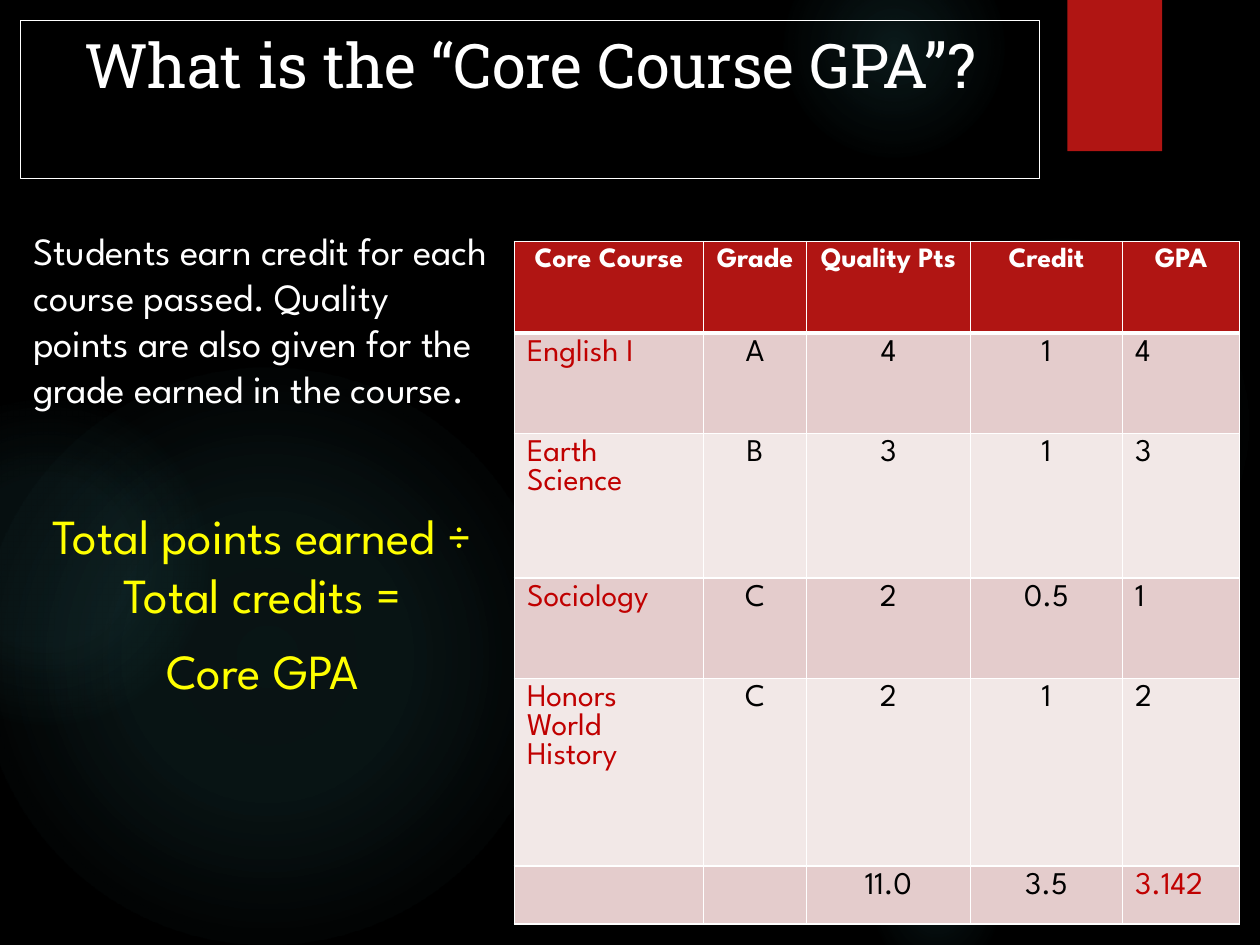
from lxml.etree import SubElement
from pptx import Presentation
from pptx.dml.color import RGBColor
from pptx.enum.shapes import MSO_SHAPE
from pptx.enum.text import MSO_ANCHOR, PP_ALIGN
from pptx.oxml import parse_xml
from pptx.oxml.ns import nsdecls, qn
from pptx.util import Cm, Pt

COLORS = {
    "background": "000000", "glow": "50B9C1", "accent": "B01513",
    "light": "FFFFFF", "dark": "000000", "formula": "FFFF00",
    "highlight": "C00000", "odd": "E4CCCC", "even": "F2E8E7",
}
BODY_FONT = "League Spartan"
TITLE_FONT = "Roboto Slab"

# left, top, diameter in cm, then (position, opacity) stops in percent
GLOWS = [
    (17.5, 4.65, 7.82, [(0, 7), (36, 6), (69, 0)]),
    (15.8, -1.27, 4.45, [(0, 14), (36, 7), (73, 0)]),
    (17.5, 16.94, 2.74, [(0, 9), (36, 5), (66, 0)]),
    (-0.43, 7.42, 11.63, [(0, 11), (36, 10), (75, 0)]),
    (-2.34, 8.05, 6.55, [(0, 8), (36, 8), (72, 0)]),
]
COLUMN_WIDTHS = [3.81, 2.08, 3.3, 3.07, 2.36]
ROW_HEIGHTS = [1.84, 2.03, 2.91, 2.03, 3.78, 1.17]
COURSES = [
    ["Core Course", "Grade", "Quality Pts", "Credit", "GPA"],
    ["English I", "A", "4", "1", "4"],
    ["Earth Science", "B", "3", "1", "3"],
    ["Sociology", "C", "2", "0.5", "1"],
    ["Honors World History", "C", "2", "1", "2"],
    ["", "", "11.0", "3.5", "3.142"],
]


def rgb(name):
    return RGBColor.from_string(COLORS[name])


def style(p, size, color, font=BODY_FONT, align=PP_ALIGN.LEFT, bold=False):
    p.alignment = align
    p.font.size, p.font.name, p.font.bold = Pt(size), font, bold
    p.font.color.rgb = rgb(color)


def add_plain_shape(s, kind, left, top, width, height):
    sp = s.shapes.add_shape(kind, Cm(left), Cm(top), Cm(width), Cm(height))
    sp.shadow.inherit = False
    sp.line.fill.background()
    return sp


def add_glow(s, left, top, size, stops):
    """Add a circle that fades out from its centre."""
    sp = add_plain_shape(s, MSO_SHAPE.OVAL, left, top, size, size)
    sp.fill.gradient()
    old = sp._element.spPr.find(qn("a:gradFill"))
    stop_xml = "".join(
        f'<a:gs pos="{pos * 1000}"><a:srgbClr val="{COLORS["glow"]}">'
        f'<a:alpha val="{alpha * 1000}"/></a:srgbClr></a:gs>'
        for pos, alpha in stops)
    old.getparent().replace(old, parse_xml(
        f'<a:gradFill {nsdecls("a")} rotWithShape="1"><a:gsLst>{stop_xml}</a:gsLst>'
        '<a:path path="circle"><a:fillToRect l="50000" t="50000" r="50000" b="50000"/>'
        '</a:path></a:gradFill>'))


def add_background(s):
    s.background.fill.solid()
    s.background.fill.fore_color.rgb = rgb("background")
    for glow in GLOWS:
        add_glow(s, *glow)
    tab = add_plain_shape(s, MSO_SHAPE.RECTANGLE, 21.52, 0, 1.91, 3.05)
    tab.fill.solid()
    tab.fill.fore_color.rgb = rgb("accent")


def add_title(s, left, top, width, height):
    sp = add_plain_shape(s, MSO_SHAPE.RECTANGLE, left, top, width, height)
    sp.fill.background()
    sp.line.color.rgb = rgb("light")
    sp.line.width = Pt(0.75)
    tf = sp.text_frame
    tf.vertical_anchor = MSO_ANCHOR.TOP
    p = tf.paragraphs[0]
    p.text = "What is the “Core Course GPA”?"
    style(p, 35.1, "light", TITLE_FONT, PP_ALIGN.CENTER)


def add_explanation(s, left, top, width, height):
    tf = s.shapes.add_textbox(Cm(left), Cm(top), Cm(width), Cm(height)).text_frame
    tf.word_wrap = True
    intro = tf.paragraphs[0]
    intro.text = ("Students earn credit for each course passed. Quality points "
                  "are also given for the grade earned in the course.")
    style(intro, 22, "light")
    for text, gap in [("Total points earned ÷ Total credits =", 53.5), ("Core GPA", 10)]:
        p = tf.add_paragraph()
        p.text = text
        style(p, 28, "formula", align=PP_ALIGN.CENTER)
        p.space_before = Pt(gap)


def set_borders(cell, top, bottom):
    """Draw white borders; top and bottom are widths in points."""
    tc_pr = cell._tc.get_or_add_tcPr()
    for i, (side, width) in enumerate(zip("LRTB", (1, 1, top, bottom))):
        ln = SubElement(tc_pr, qn(f"a:ln{side}"), w=str(Pt(width)))
        fill = SubElement(ln, qn("a:solidFill"))
        SubElement(fill, qn("a:srgbClr"), val=COLORS["light"])
        tc_pr.insert(i, ln)


def style_cell(cell, row, col):
    header = row == 0
    first, last = col == 0, col == len(COLUMN_WIDTHS) - 1
    total = last and row == len(COURSES) - 1
    cell.fill.solid()
    cell.fill.fore_color.rgb = rgb("accent" if header else "odd" if row % 2 else "even")
    set_borders(cell, 3 if row == 1 else 1, 3 if header else 1)
    p = cell.text_frame.paragraphs[0]
    if header:
        style(p, 16, "light", align=PP_ALIGN.CENTER, bold=True)
    else:
        style(p, 18, "highlight" if first or total else "dark",
              align=PP_ALIGN.LEFT if first or last else PP_ALIGN.CENTER)


def add_course_table(s, left, top):
    table = s.shapes.add_table(
        len(COURSES), len(COLUMN_WIDTHS), Cm(left), Cm(top),
        Cm(sum(COLUMN_WIDTHS)), Cm(sum(ROW_HEIGHTS))).table
    for column, width in zip(table.columns, COLUMN_WIDTHS):
        column.width = Cm(width)
    for r, (height, values) in enumerate(zip(ROW_HEIGHTS, COURSES)):
        table.rows[r].height = Cm(height)
        for c, value in enumerate(values):
            cell = table.cell(r, c)
            cell.text = value
            style_cell(cell, r, c)


def main():
    prs = Presentation()
    prs.slide_width, prs.slide_height = Cm(25.4), Cm(19.05)
    s = prs.slides.add_slide(prs.slide_layouts[6])
    add_background(s)
    add_title(s, 0.42, 0.42, 20.53, 3.18)
    add_explanation(s, 0.42, 4.45, 9.74, 13.76)
    add_course_table(s, 10.37, 4.87)
    prs.save("out.pptx")


if __name__ == "__main__":
    main()
